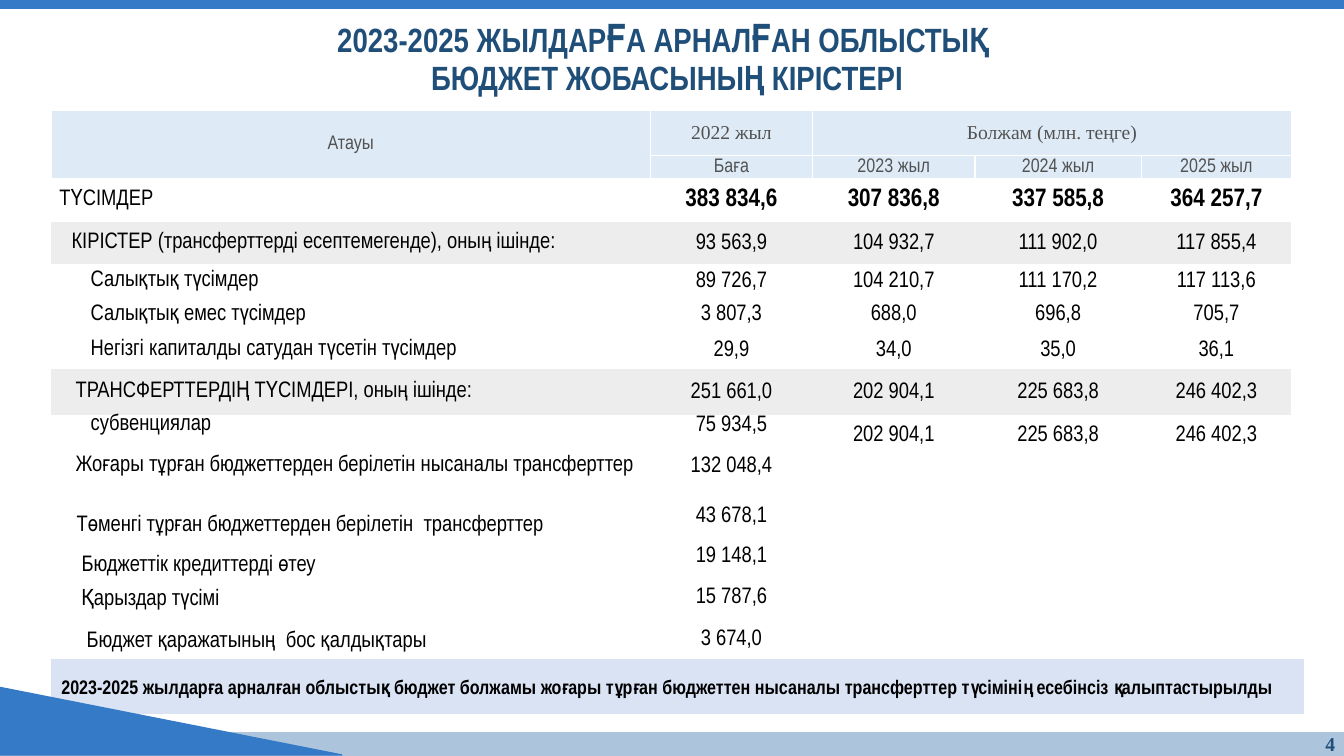
from dataclasses import dataclass

import pptx
import pptx.util
import pptx.dml.color
import pptx.enum.shapes
import pptx.enum.text
import pptx.oxml.ns
from lxml import etree

Inches = pptx.util.Inches
Align = pptx.enum.text.PP_ALIGN
Anchor = pptx.enum.text.MSO_ANCHOR
Preset = pptx.enum.shapes.MSO_SHAPE


@dataclass(frozen=True)
class Theme:
    blue: str = "347AC6"
    footer: str = "ACC5DC"
    banner: str = "DAE3F3"
    heading: str = "1F4E79"
    header_fill: str = "DEEBF7"
    header_text: str = "525252"
    group_fill: str = "EDEDED"
    body: str = "000000"
    white: str = "FFFFFF"
    narrow: str = "Arial Narrow"
    serif: str = "Times New Roman"
    title_size: int = 24
    title_accent: int = 28
    total_size: int = 18
    body_size: int = 16
    small_size: int = 14


THEME = Theme()


@dataclass(frozen=True)
class Style:
    size: int
    color: str
    font: str = THEME.narrow
    bold: bool = False


TITLE = Style(THEME.title_size, THEME.heading, bold=True)
TITLE_ACCENT = Style(THEME.title_accent, THEME.heading, bold=True)
PAGE = Style(THEME.small_size, THEME.heading, THEME.serif, True)
NOTICE = Style(THEME.small_size, THEME.body, bold=True)
HEADER = Style(THEME.small_size, THEME.header_text)
HEADER_SERIF = Style(THEME.small_size, THEME.header_text, THEME.serif)
BODY = Style(THEME.body_size, THEME.body)
TOTAL = Style(THEME.total_size, THEME.body, bold=True)


@dataclass(frozen=True)
class Band:
    left: float
    top: float
    width: float
    height: float
    color: str
    preset: int = Preset.RECTANGLE
    text: str = ""


@dataclass(frozen=True)
class Heading:
    row: int
    column: int
    text: str
    style: Style = HEADER


@dataclass(frozen=True)
class BudgetLine:
    label: str
    values: tuple[str, ...]
    height: float
    indent: float
    figures: Style = BODY
    fill: str = ""
    anchor: int = Anchor.MIDDLE
    figure_anchor: int = Anchor.MIDDLE
    bottom: float = 0


BANDS = (
    Band(0, 7.27, 13.33, 0.23, THEME.footer),
    Band(0.51, 6.54, 12.42, 0.54, THEME.banner,
         text="2023-2025 жылдарға арналған облыстық бюджет болжамы жоғары тұрған бюджеттен "
              "нысаналы трансферттер түсімінің есебінсіз қалыптастырылды"),
    Band(0, 6.82, 3.39, 0.67, THEME.blue, Preset.RIGHT_TRIANGLE),
    Band(0, -0.02, 13.33, 0.1, THEME.blue),
)

TITLE_LINES = (
    (("2023-2025 ЖЫЛДАР", TITLE), ("Ғ", TITLE_ACCENT), ("А АРНАЛ", TITLE),
     ("Ғ", TITLE_ACCENT), ("АН ОБЛЫСТЫҚ ", TITLE)),
    (("БЮДЖЕТ ЖОБАСЫНЫҢ КІРІСТЕРІ", TITLE),),
)

COLUMN_WIDTHS = (5.94, 1.61, 1.61, 1.65, 1.49)
HEADER_HEIGHTS = (0.44, 0.17)
HEADINGS = (
    Heading(0, 0, "Атауы"),
    Heading(0, 1, "2022 жыл", HEADER_SERIF),
    Heading(0, 2, "Болжам (млн. теңге)", HEADER_SERIF),
    Heading(1, 1, "Баға"),
    Heading(1, 2, "2023 жыл"),
    Heading(1, 3, "2024 жыл"),
    Heading(1, 4, "2025 жыл"),
)

BUDGET = (
    BudgetLine("ТҮСІМДЕР", ("383 834,6", "307 836,8", "337 585,8", "364 257,7"),
               0.42, 0.08, TOTAL),
    BudgetLine("КІРІСТЕР (трансферттерді есептемегенде), оның ішінде:",
               ("93 563,9", "104 932,7", "111 902,0", "117 855,4"), 0.43, 0.2,
               fill=THEME.group_fill),
    BudgetLine("Салықтық түсімдер", ("89 726,7", "104 210,7", "111 170,2", "117 113,6"),
               0.33, 0.39),
    BudgetLine("Салықтық емес түсімдер", ("3 807,3", "688,0", "696,8", "705,7"), 0.33, 0.39),
    BudgetLine("Негізгі капиталды сатудан түсетін түсімдер",
               ("29,9", "34,0", "35,0", "36,1"), 0.38, 0.39),
    BudgetLine("ТРАНСФЕРТТЕРДІҢ ТҮСІМДЕРІ, оның ішінде:",
               ("251 661,0", "202 904,1", "225 683,8", "246 402,3"), 0.45, 0.24,
               fill=THEME.group_fill),
    BudgetLine("субвенциялар", ("75 934,5", "202 904,1", "225 683,8", "246 402,3"),
               0.4, 0.39, anchor=Anchor.TOP, figure_anchor=Anchor.TOP),
    BudgetLine("Жоғары тұрған бюджеттерден берілетін нысаналы трансферттер", ("132 048,4",),
               0.5, 0.24, anchor=Anchor.TOP, figure_anchor=Anchor.TOP),
    BudgetLine("Төменгі тұрған бюджеттерден берілетін  трансферттер", ("43 678,1",),
               0.4, 0.25, figure_anchor=Anchor.TOP),
    BudgetLine("Бюджеттік кредиттерді өтеу", ("19 148,1",), 0.4, 0.3,
               figure_anchor=Anchor.TOP),
    BudgetLine("Қарыздар түсімі", ("15 787,6",), 0.4, 0.3,
               figure_anchor=Anchor.TOP, bottom=0.15),
    BudgetLine("Бюджет қаражатының  бос қалдықтары", ("3 674,0",), 0.4, 0.35,
               figure_anchor=Anchor.TOP, bottom=0.15),
)


def rgb(color: str) -> pptx.dml.color.RGBColor:
    return pptx.dml.color.RGBColor.from_string(color)


def add_run(paragraph, text: str, style: Style) -> None:
    run = paragraph.add_run()
    run.text = text
    run.font.name = style.font
    run.font.size = pptx.util.Pt(style.size)
    run.font.bold = style.bold
    run.font.color.rgb = rgb(style.color)


def draw_band(slide, band: Band) -> None:
    shape = slide.shapes.add_shape(band.preset, *map(Inches, (
        band.left, band.top, band.width, band.height)))
    shape.shadow.inherit = False
    shape.fill.solid()
    shape.fill.fore_color.rgb = rgb(band.color)
    shape.line.color.rgb = rgb(band.color)
    shape.line.width = pptx.util.Pt(1)
    if band.text:
        shape.text_frame.vertical_anchor = Anchor.MIDDLE
        paragraph = shape.text_frame.paragraphs[0]
        paragraph.alignment = Align.LEFT
        add_run(paragraph, band.text, NOTICE)


def draw_text(slide, box: tuple, lines: tuple, alignment: int) -> None:
    frame = slide.shapes.add_textbox(*map(Inches, box)).text_frame
    frame.word_wrap = True
    frame.vertical_anchor = Anchor.MIDDLE
    for index, line in enumerate(lines):
        paragraph = frame.add_paragraph() if index else frame.paragraphs[0]
        paragraph.alignment = alignment
        paragraph.line_spacing = 0.9
        for text, style in line:
            add_run(paragraph, text, style)


def set_cell(cell, text: str, style: Style, alignment: int, anchor: int, insets: tuple) -> None:
    (cell.margin_left, cell.margin_top,
     cell.margin_right, cell.margin_bottom) = map(Inches, insets)
    cell.vertical_anchor = anchor
    paragraph = cell.text_frame.paragraphs[0]
    paragraph.alignment = alignment
    paragraph.font.size = pptx.util.Pt(style.size)
    if text:
        add_run(paragraph, text, style)


def paint_cell(cell, fill: str, edges: tuple[str, ...] = ()) -> None:
    qn = pptx.oxml.ns.qn
    properties = cell._tc.get_or_add_tcPr()
    for edge in edges:
        border = etree.SubElement(properties, qn(f"a:{edge}"), w=str(pptx.util.Pt(1)))
        solid = etree.SubElement(border, qn("a:solidFill"))
        etree.SubElement(solid, qn("a:srgbClr"), val=THEME.white)
    if fill:
        cell.fill.solid()
        cell.fill.fore_color.rgb = rgb(fill)
    else:
        cell.fill.background()


def draw_budget(slide) -> None:
    heights = (*HEADER_HEIGHTS, *(line.height for line in BUDGET))
    table = slide.shapes.add_table(
        len(heights), len(COLUMN_WIDTHS), Inches(0.51), Inches(1.1),
        Inches(sum(COLUMN_WIDTHS)), Inches(sum(heights))).table
    table.first_row = table.horz_banding = False
    style_id = table._tbl.tblPr.find(pptx.oxml.ns.qn("a:tableStyleId"))
    style_id.text = "{2D5ABB26-0587-4C30-8999-92F81FD0307C}"
    for column, width in zip(table.columns, COLUMN_WIDTHS):
        column.width = Inches(width)
    for row, height in zip(table.rows, heights):
        row.height = Inches(height)
    table.cell(0, 0).merge(table.cell(1, 0))
    table.cell(0, 2).merge(table.cell(0, 4))

    headings = {(item.row, item.column): item for item in HEADINGS}
    for row in range(len(HEADER_HEIGHTS)):
        for column in range(len(COLUMN_WIDTHS)):
            item = headings.get((row, column), Heading(row, column, ""))
            cell = table.cell(row, column)
            set_cell(cell, item.text, item.style, Align.CENTER, Anchor.MIDDLE, (0, 0, 0, 0))
            paint_cell(cell, THEME.header_fill, ("lnL", "lnR", "lnT", "lnB"))

    for row, line in enumerate(BUDGET, len(HEADER_HEIGHTS)):
        edges = ("lnT",) if row == len(HEADER_HEIGHTS) else ()
        set_cell(table.cell(row, 0), line.label, BODY, Align.LEFT, line.anchor,
                 (line.indent, 0, 0, line.bottom))
        paint_cell(table.cell(row, 0), line.fill, edges)
        for column in range(1, len(COLUMN_WIDTHS)):
            value = line.values[column - 1] if column <= len(line.values) else ""
            anchor = line.figure_anchor if column == 1 else Anchor.MIDDLE
            cell = table.cell(row, column)
            set_cell(cell, value, line.figures, Align.CENTER, anchor, (0.01, 0.01, 0.01, 0))
            paint_cell(cell, line.fill, edges)


def main() -> None:
    deck = pptx.Presentation()
    deck.slide_width, deck.slide_height = Inches(13.33), Inches(7.5)
    slide = deck.slides.add_slide(deck.slide_layouts[6])
    for band in BANDS:
        draw_band(slide, band)
    draw_text(slide, (0.16, 0.28, 12.91, 0.59), TITLE_LINES, Align.CENTER)
    draw_budget(slide)
    draw_text(slide, (12.62, 7.26, 0.72, 0.27), ((("4", PAGE),),), Align.RIGHT)
    deck.save("out.pptx")


if __name__ == "__main__":
    main()
